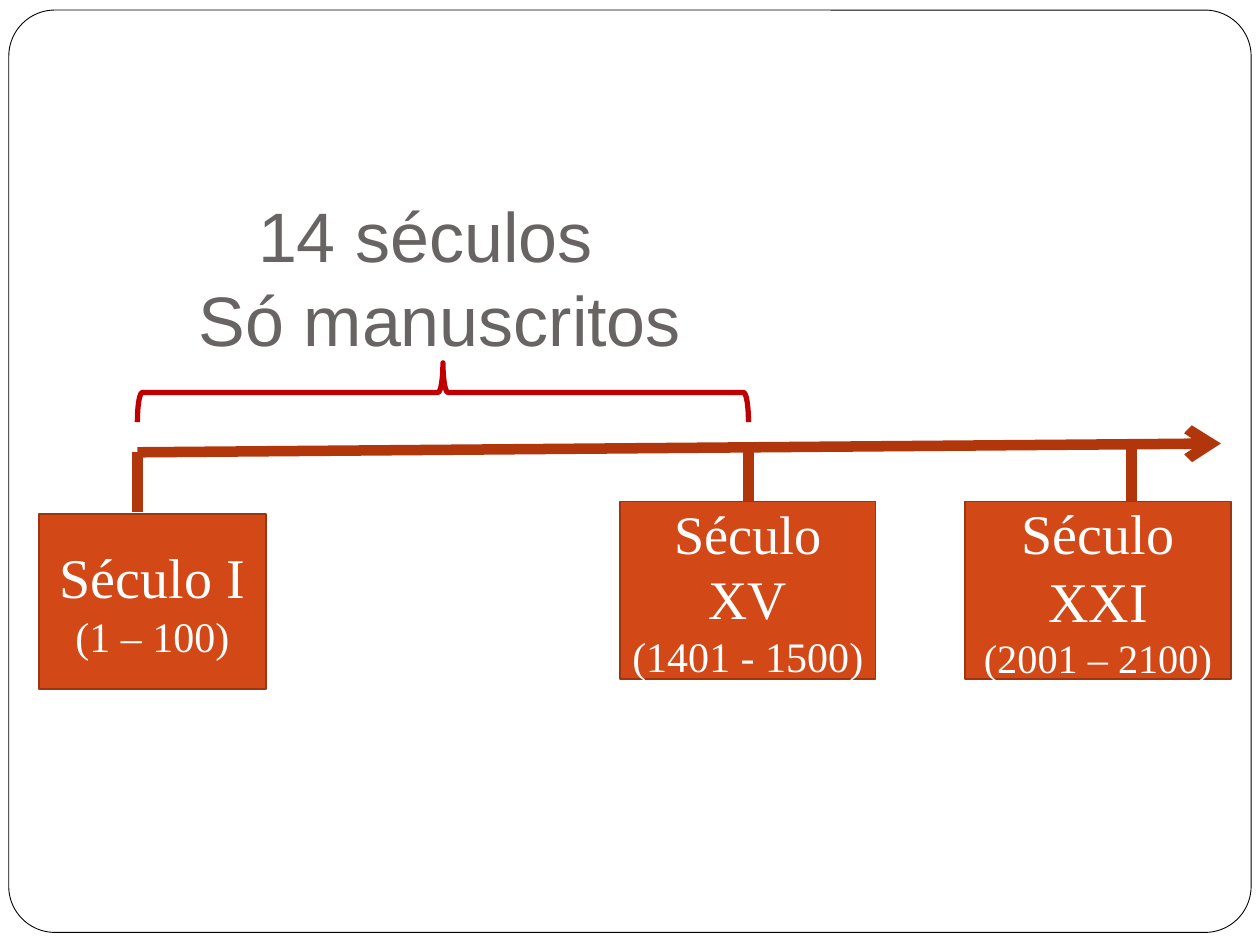
from lxml import etree
from pptx import Presentation
from pptx.dml.color import RGBColor
from pptx.enum.shapes import MSO_CONNECTOR as Connector, MSO_SHAPE as Shape
from pptx.enum.text import MSO_ANCHOR as Anchor, PP_ALIGN as Align
from pptx.oxml.ns import qn
from pptx.util import Inches, Pt

WHITE = RGBColor(0xFF, 0xFF, 0xFF)
BLACK = RGBColor(0x00, 0x00, 0x00)
ORANGE = RGBColor(0xD3, 0x48, 0x17)
BORDER = RGBColor(0x9C, 0x35, 0x11)
RUST = RGBColor(0xB1, 0x36, 0x0B)
RED = RGBColor(0xC0, 0x00, 0x00)
GRAY = RGBColor(0x69, 0x64, 0x64)

START_X, PRINT_X, TODAY_X, END_X = 1.09, 5.94, 8.98, 9.69
CENTURIES = [
    ((0.31, 4.08, 1.8, 1.39), ("Século I", 32), ("(1 – 100)", 24)),
    ((4.92, 3.98, 2.03, 1.41), ("Século XV", 31), ("(1401 - 1500)", 24)),
    ((7.66, 3.98, 2.11, 1.41), ("Século XXI", 32), ("(2001 – 2100)", 23)),
]


def add_filled(page, kind, box, fill, line, width):
    """Add a shadowless preset shape with a solid fill and outline."""
    shape = page.shapes.add_shape(kind, *map(Inches, box))
    shape.shadow.inherit = False
    shape.fill.solid()
    shape.fill.fore_color.rgb = fill
    shape.line.color.rgb = line
    shape.line.width = Pt(width)
    return shape


def write_para(para, text, font, size, color):
    """Fill one paragraph with text in a single font."""
    para.text = text
    para.font.name = font
    para.font.size = Pt(size)
    para.font.color.rgb = color


def add_frame(page, box):
    """Add the rounded page border."""
    frame = add_filled(page, Shape.ROUNDED_RECTANGLE, box, WHITE, BLACK, 0.5)
    frame.adjustments[0] = 0.05


def add_line(page, start, end, arrow=False):
    """Add a thick line, with an arrowhead at its end if asked."""
    line = page.shapes.add_connector(Connector.STRAIGHT, *map(Inches, start + end))
    line.line.color.rgb = RUST
    line.line.width = Pt(6)
    if arrow:
        etree.SubElement(line.line._get_or_add_ln(), qn("a:tailEnd"), type="arrow")
    etree.SubElement(line._element.spPr, qn("a:effectLst"))


def add_timeline(page, box):
    """Add the time arrow and the ticks that lead to the centuries."""
    left, top, width, height = box
    bottom = top + height
    add_line(page, (left, bottom), (left + width, top), arrow=True)
    for x, tick_top in ((START_X, bottom), (PRINT_X, top), (TODAY_X, top)):
        add_line(page, (x, tick_top), (x, tick_top + 0.47))


def add_brace(page, box):
    """Add a brace that opens downward over the given box."""
    left, top, width, height = box
    upright = (left + (width - height) / 2, top + (height - width) / 2, height, width)
    brace = add_filled(page, Shape.LEFT_BRACE, upright, WHITE, RED, 3)
    brace.rotation = 90


def add_caption(page, box):
    """Add the two caption lines above the brace."""
    frame = page.shapes.add_textbox(*map(Inches, box)).text_frame
    frame.word_wrap = True
    lines = (("14 séculos", 0.62), ("Só manuscritos", 0.15))
    for index, (text, indent) in enumerate(lines):
        para = frame.add_paragraph() if index else frame.paragraphs[0]
        write_para(para, text, "Arial", 40, GRAY)
        para._p.get_or_add_pPr().set("marL", str(Inches(indent)))


def add_century(page, box, name, years):
    """Add one century card with its name and its years."""
    card = add_filled(page, Shape.RECTANGLE, box, ORANGE, BORDER, 1)
    frame = card.text_frame
    frame.word_wrap = True
    frame.vertical_anchor = Anchor.MIDDLE
    for para, (text, size) in zip((frame.paragraphs[0], frame.add_paragraph()), (name, years)):
        write_para(para, text, "Times New Roman", size, WHITE)
        para.alignment = Align.CENTER


def main():
    """Build the slide and save it."""
    deck = Presentation()
    deck.slide_width, deck.slide_height = Inches(10), Inches(7.5)
    page = deck.slides.add_slide(deck.slide_layouts[6])
    add_frame(page, (0.07, 0.08, 9.86, 7.32))
    add_timeline(page, (START_X, 3.52, END_X - START_X, 0.07))
    add_brace(page, (START_X, 2.88, PRINT_X - START_X, 0.47))
    add_caption(page, (1.33, 1.48, 4.23, 1.45))
    for box, name, years in CENTURIES:
        add_century(page, box, name, years)
    deck.save("out.pptx")


if __name__ == "__main__":
    main()
